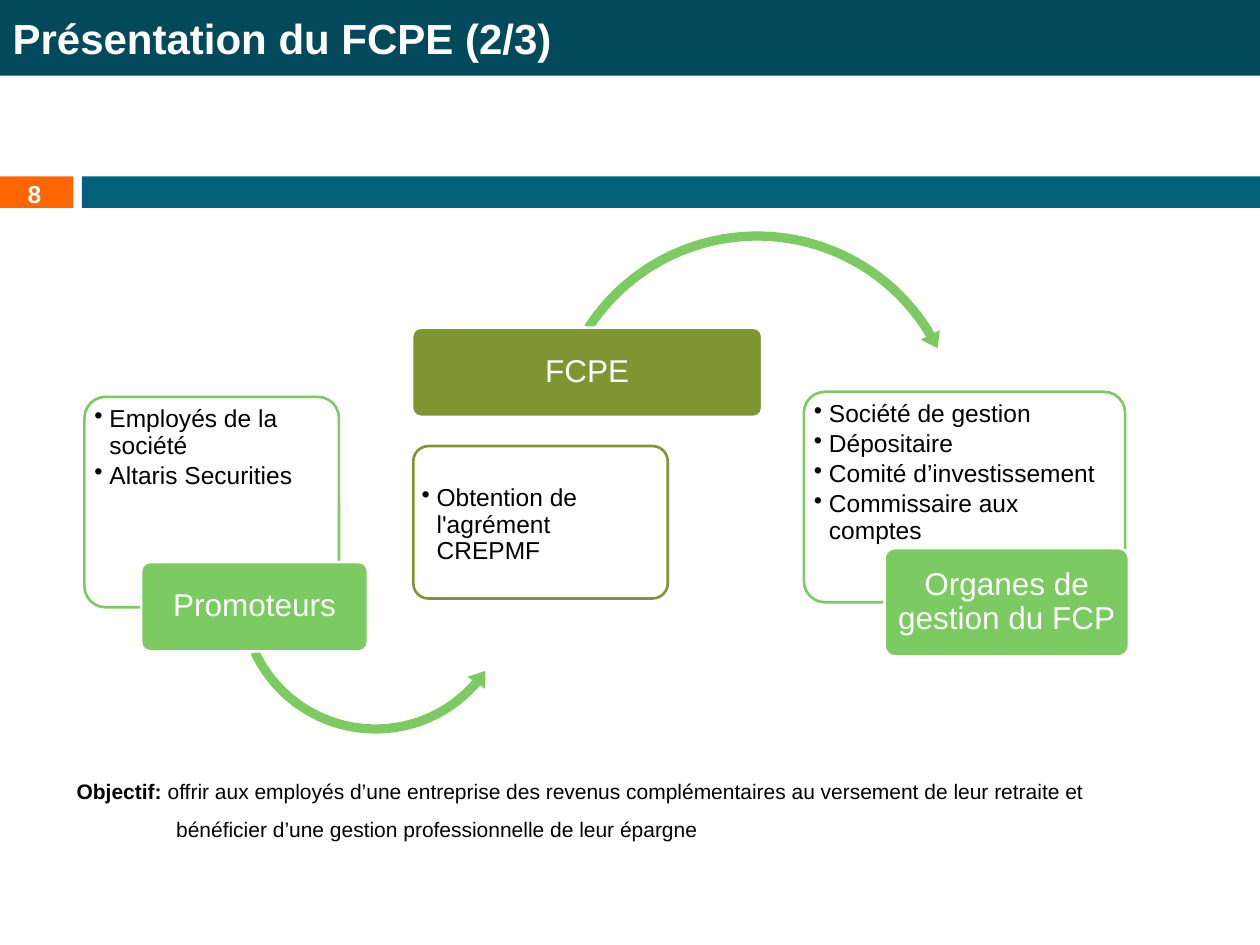
from lxml import etree
from pptx import Presentation
from pptx.dml.color import RGBColor
from pptx.enum.shapes import MSO_SHAPE
from pptx.enum.text import MSO_ANCHOR, MSO_AUTO_SIZE, PP_ALIGN
from pptx.oxml.ns import qn
from pptx.util import Inches, Pt

RECTANGLE, ROUNDED = MSO_SHAPE.RECTANGLE, MSO_SHAPE.ROUNDED_RECTANGLE
ARC_OVER, ARC_UNDER = MSO_SHAPE.CIRCULAR_ARROW, MSO_SHAPE.LEFT_CIRCULAR_ARROW
TOP, MIDDLE = MSO_ANCHOR.TOP, MSO_ANCHOR.MIDDLE
LEFT, CENTER = PP_ALIGN.LEFT, PP_ALIGN.CENTER
NO_AUTOFIT = MSO_AUTO_SIZE.NONE

WHITE, BLACK = "FFFFFF", "000000"
GREEN, OLIVE = "7CCA62", "7E9632"


def add_block(page, kind, place, fill, line=None, adjustments=()):
    block = page.shapes.add_shape(kind, *map(Inches, place))
    block.shadow.inherit = False
    block.fill.solid()
    block.fill.fore_color.rgb = RGBColor.from_string(fill)
    if line:
        block.line.color.rgb = RGBColor.from_string(line)
        block.line.width = Pt(1.5)
    else:
        block.line.fill.background()
    for index, value in enumerate(adjustments):
        block.adjustments[index] = value
    return block


def write(box, paragraphs, size, color, anchor=TOP, margins=None, hanging=0,
          bullet=None, **formats):
    """Fill a box with paragraphs, each a list of (text, bold) spans."""
    frame = box.text_frame
    frame.auto_size = NO_AUTOFIT
    frame.word_wrap = True
    frame.vertical_anchor = anchor
    for side, margin in (margins or {}).items():
        setattr(frame, f"margin_{side}", Inches(margin))
    for number, spans in enumerate(paragraphs):
        para = frame.add_paragraph() if number else frame.paragraphs[0]
        for name, value in formats.items():
            setattr(para, name, value)
        if hanging:
            properties = para._p.get_or_add_pPr()
            properties.set("marL", str(Inches(hanging)))
            properties.set("indent", str(-Inches(hanging)))
            if bullet:
                etree.SubElement(properties, qn("a:buChar")).set("char", bullet)
        for text, bold in spans:
            span = para.add_run()
            span.text = text
            span.font.name = "Arial"
            span.font.size = Pt(size)
            span.font.bold = bold
            span.font.color.rgb = RGBColor.from_string(color)


deck = Presentation()
deck.slide_width, deck.slide_height = Inches(10), Inches(7.5)
page = deck.slides.add_slide(deck.slide_layouts[5])

# Title band, page number and rule
add_block(page, RECTANGLE, (0, 1.4, 0.58, 0.25), "FF6600")
add_block(page, RECTANGLE, (0.65, 1.4, 9.35, 0.25), "04617B")
title = page.shapes.title
title.left, title.top = Inches(0), Inches(0)
title.width, title.height = Inches(10), Inches(0.6)
title.fill.solid()
title.fill.fore_color.rgb = RGBColor.from_string("03495C")
write(title, [[("Présentation du FCPE (2/3)", True)]], 24, WHITE, MIDDLE,
      alignment=LEFT)
page_number = page.shapes.add_textbox(*map(Inches, (0.12, 1.37, 0.58, 0.27)))
write(page_number, [[("8", True)]], 14, WHITE)

# Each stage: panel place, bullets, top margin, label place, label, colour, arrow
stages = [
    ((0.67, 3.15, 2.02, 1.67), ["Employés de la société", "Altaris Securities"], 0.03,
     (1.12, 4.46, 1.8, 0.71), "Promoteurs", GREEN,
     (ARC_UNDER, (1.84, 3.59, 2.28, 2.28), (0.032, 3.903, 24.435, 93.022, 0.037))),
    ((3.28, 3.54, 2.02, 1.21), ["Obtention de l'agrément CREPMF"], 0.28,
     (3.27, 2.6, 2.78, 0.71), "FCPE", OLIVE,
     (ARC_OVER, (4.33, 1.79, 3.36, 3.36), (0.022, 2.589, 197.656, 127.755, 0.025))),
    ((6.38, 3.11, 2.55, 1.67),
     ["Société de gestion", "Dépositaire", "Comité d’investissement",
      "Commissaire aux comptes"], 0.03,
     (7.02, 4.35, 1.94, 0.86), "Organes de gestion du FCP", GREEN, None),
]
for panel_place, items, top, label_place, label_text, color, arrow in stages:
    panel = add_block(page, ROUNDED, panel_place, WHITE, color, [0.1])
    write(panel, [[(item, False)] for item in items], 14, BLACK,
          margins={"left": 0.03, "top": top, "right": 0.03, "bottom": 0.03},
          hanging=0.12, bullet="•", alignment=LEFT, line_spacing=0.9,
          space_after=Pt(2))
    if arrow:
        kind, arrow_place, adjustments = arrow
        add_block(page, kind, arrow_place, GREEN, adjustments=adjustments)
    label = add_block(page, ROUNDED, label_place, color, WHITE, [0.1])
    write(label, [[(label_text, False)]], 18, WHITE, MIDDLE,
          margins={"left": 0.04, "top": 0.03, "right": 0.04, "bottom": 0.03},
          alignment=CENTER, line_spacing=0.9)

# Objective
objective = page.shapes.add_textbox(*map(Inches, (0.51, 6.03, 8.9, 0.67)))
write(objective, [[
    ("Objectif: ", True),
    ("offrir aux employés d’une entreprise des revenus complémentaires au versement "
     "de leur retraite et bénéficier d’une gestion professionnelle de leur épargne",
     False),
]], 12, BLACK, hanging=0.79, line_spacing=1.5)

deck.save("out.pptx")
